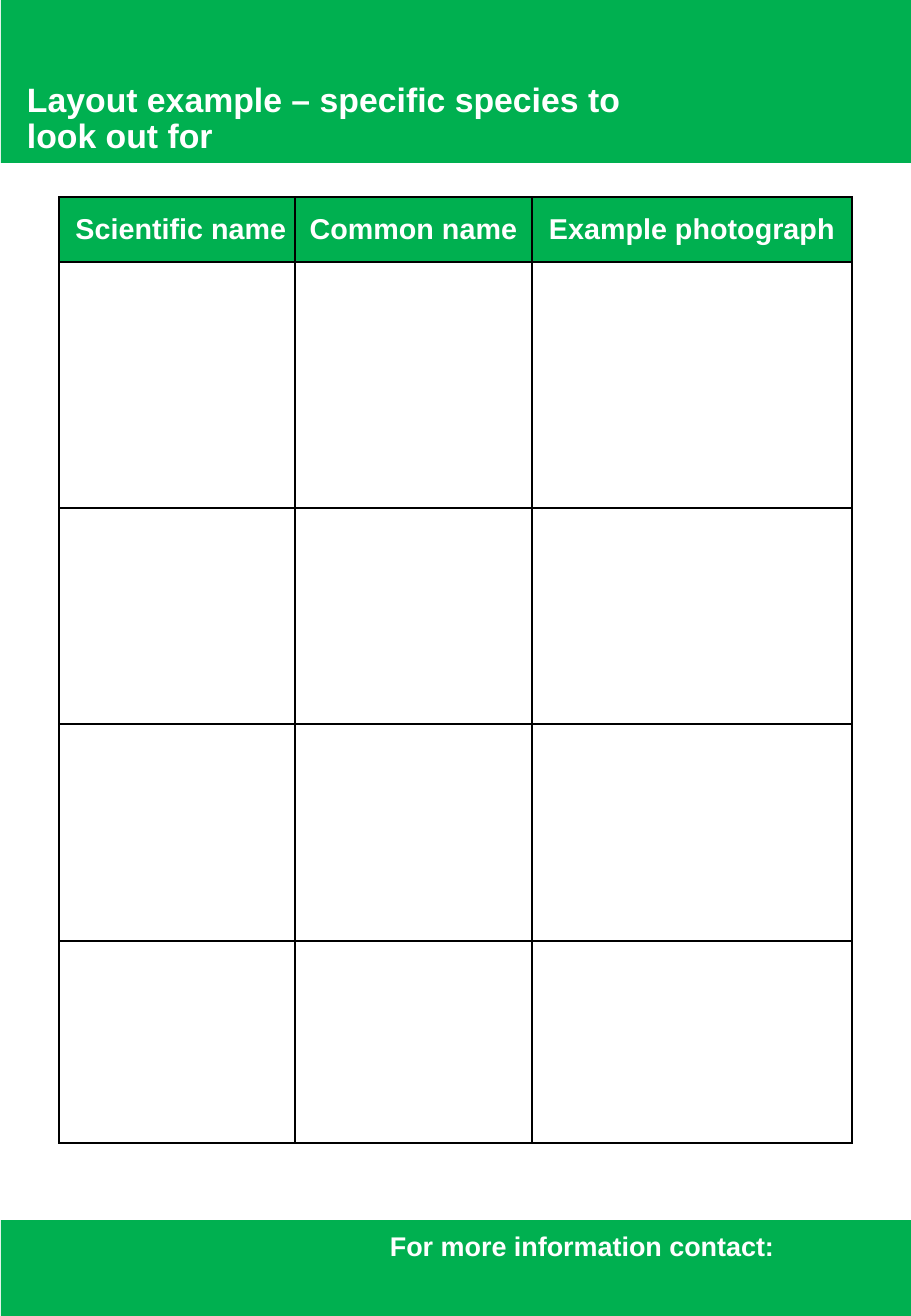
from pptx import Presentation
from pptx.dml.color import RGBColor
from pptx.enum.shapes import MSO_SHAPE as Shape
from pptx.enum.text import MSO_ANCHOR as Anchor, PP_ALIGN as Align
from pptx.oxml import parse_xml
from pptx.oxml.ns import nsdecls
from pptx.util import Emu, Pt

# Content, lengths in px
WIDE, HIGH = 911, 1316
GREEN, WHITE, BLACK = "00B050", "FFFFFF", "000000"
BANDS = [(1, -1, 910, 164), (1, 1220, 910, 96)]
TITLE = "Layout example – specific species to look out for"
CONTACT = "For more information contact:"
HEADS = ["Scientific name", "Common name", "Example photograph"]
PADS = [(12, 4), (4, 4), (0, 0)]
COLS = [236, 237, 320]
ROWS = [65, 246, 216, 217, 202]
LEFT, TOP = 59, 197


def px(n):
    return Emu(round(n * 914400 / 121.5))


def color(code):
    return RGBColor.from_string(code)


def write(frame, text, size, align=Align.LEFT, gap=None):
    frame.word_wrap = True
    para = frame.paragraphs[0]
    para.alignment = align
    para.line_spacing = gap
    run = para.add_run()
    run.text = text
    font = run.font
    font.name, font.size, font.bold = "Arial", Pt(size), True
    font.color.rgb = color(WHITE)


def label(box, text, size, **form):
    write(slide.shapes.add_textbox(*map(px, box)).text_frame, text, size, **form)


def border(cell):
    props = cell._tc.get_or_add_tcPr()
    for i, side in enumerate("LRTB"):
        props.insert(i, parse_xml(
            f'<a:ln{side} {nsdecls("a")} w="{Pt(1)}"><a:solidFill>'
            f'<a:srgbClr val="{BLACK}"/></a:solidFill></a:ln{side}>'))


deck = Presentation()
deck.slide_width, deck.slide_height = px(WIDE), px(HIGH)
slide = deck.slides.add_slide(deck.slide_layouts[6])

# Green bands
for box in BANDS:
    band = slide.shapes.add_shape(Shape.RECTANGLE, *map(px, box))
    band.shadow.inherit = False
    band.fill.solid()
    band.fill.fore_color.rgb = color(GREEN)
    band.line.fill.background()

# Title and contact line
label((15, 77, 694, 69), TITLE, 20, gap=0.9)
label((378, 1224, 451, 45), CONTACT, 16)

# Species table
area = map(px, (LEFT, TOP, sum(COLS), sum(ROWS)))
table = slide.shapes.add_table(len(ROWS), len(COLS), *area).table
table.first_row = table.horz_banding = False
for col, wide in zip(table.columns, COLS):
    col.width = px(wide)
for row, high in zip(table.rows, ROWS):
    row.height = px(high)
for cell in table.iter_cells():
    cell.fill.background()
    border(cell)

# Heading row
for cell, head, (left, right) in zip(table.rows[0].cells, HEADS, PADS):
    cell.fill.solid()
    cell.fill.fore_color.rgb = color(GREEN)
    cell.vertical_anchor = Anchor.MIDDLE
    cell.margin_left, cell.margin_right = px(left), px(right)
    cell.margin_top = cell.margin_bottom = px(right)
    write(cell.text_frame, head, 17, align=Align.CENTER)

deck.save("out.pptx")
